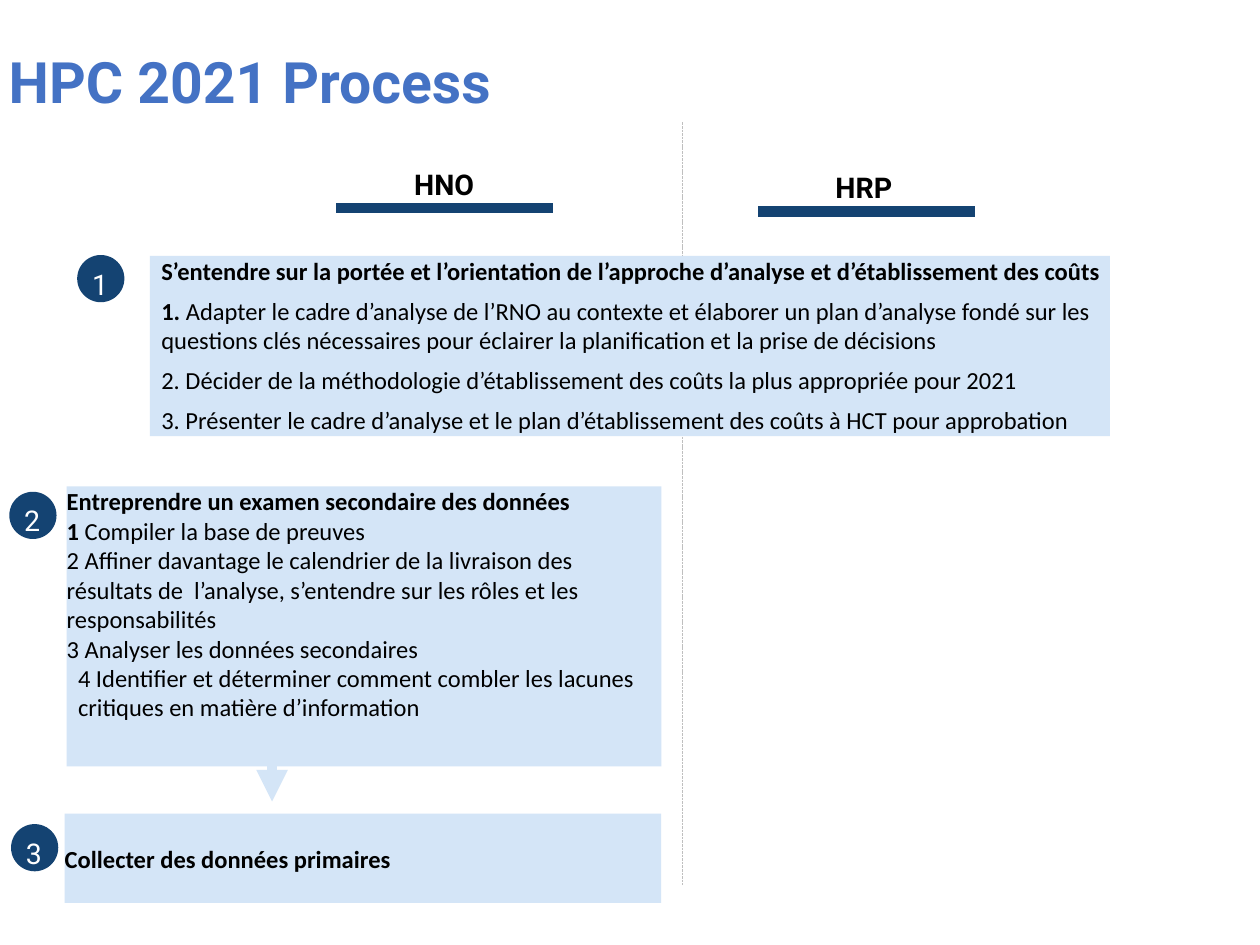
"""Build the HPC 2021 process slide."""
import pptx
import pptx.util
import pptx.dml.color
import pptx.enum.dml
import pptx.enum.shapes
import pptx.enum.text
import pptx.oxml

Pt = pptx.util.Pt
ALIGN = pptx.enum.text.PP_ALIGN
ANCHOR = pptx.enum.text.MSO_ANCHOR
SHAPE = pptx.enum.shapes.MSO_SHAPE

COLORS = {"title": "4472C4", "navy": "144372", "panel": "D4E5F7",
          "divider": "BFBFBF", "text": "000000", "white": "FFFFFF"}

TITLE = "HPC 2021 Process"
HEADINGS = [("HNO", 147.6, 85.7, 192.2, 118.8), ("HRP", 387.4, 87.1, 433.4, 121)]
HEADING_W, BAR_W = 212.4, 123.8
BADGE, DIGIT_DX, DIGIT_DY = 26, 8, -3.6
INDENT = 6.5

STEPS = [
    {"box": (85.7, 146.2, 548.6, 103), "badge": (44.6, 146.2), "anchor": ANCHOR.TOP,
     "lines": [
         ("S’entendre sur la portée et l’orientation de l’approche d’analyse "
          "et d’établissement des coûts", "", INDENT, 6),
         ("1. ", "Adapter le cadre d’analyse de l’RNO au contexte et élaborer un plan "
          "d’analyse fondé sur les questions clés nécessaires pour éclairer la "
          "planification et la prise de décisions", INDENT, 6),
         ("", "2. Décider de la méthodologie d’établissement des coûts la plus "
          "appropriée pour 2021", INDENT, 6),
         ("", "3. Présenter le cadre d’analyse et le plan d’établissement des coûts "
          "à HCT pour approbation", INDENT, 6)]},
    {"box": (38.1, 278, 339.8, 160), "badge": (5.8, 281.5), "anchor": ANCHOR.TOP,
     "lines": [
         ("Entreprendre un examen secondaire des données", "", 0, 0),
         ("1 ", "Compiler la base de preuves", 0, 0),
         ("", "2 Affiner davantage le calendrier de la livraison des résultats de  "
          "l’analyse, s’entendre sur les rôles et les responsabilités", 0, 0),
         ("", "3 Analyser les données secondaires", 0, 0),
         ("", "4 Identifier et déterminer comment combler les lacunes critiques "
          "en matière d’information", INDENT, 6)]},
    {"box": (37, 465, 340.8, 51), "badge": (6.8, 471.4), "anchor": ANCHOR.MIDDLE,
     "lines": [("Collecter des données primaires", "", 0, 0)]},
]


def rgb(name):
    return pptx.dml.color.RGBColor.from_string(COLORS[name])


def set_frame(tf, anchor=ANCHOR.TOP, wrap=True):
    tf.margin_left = tf.margin_right = tf.margin_top = tf.margin_bottom = 0
    tf.vertical_anchor, tf.word_wrap = anchor, wrap


def style(r, font, size, color, bold=False):
    r.font.name, r.font.size, r.font.bold = font, Pt(size), bold
    r.font.color.rgb = rgb(color)


def add_label(slide, text, box, size, color, bold=False, align=ALIGN.LEFT,
              spacing=1.0, wrap=True):
    tf = slide.shapes.add_textbox(*map(Pt, box)).text_frame
    set_frame(tf, wrap=wrap)
    p = tf.paragraphs[0]
    p.text, p.alignment, p.line_spacing = text, align, spacing
    style(p.runs[0], "Roboto", size, color, bold)


def add_line(slide, ends, color, width):
    kind = pptx.enum.shapes.MSO_CONNECTOR.STRAIGHT
    sp = slide.shapes.add_connector(kind, *map(Pt, ends))
    sp.line.color.rgb, sp.line.width = rgb(color), Pt(width)
    pr = sp._element.spPr
    pr.append(pr.makeelement(pptx.oxml.ns.qn("a:effectLst"), {}))
    return sp


def add_shape(slide, kind, box, color):
    sp = slide.shapes.add_shape(kind, *map(Pt, box))
    sp.shadow.inherit = False
    sp.fill.solid()
    sp.fill.fore_color.rgb = rgb(color)
    return sp


def add_step(slide, number, step):
    sp = add_shape(slide, SHAPE.RECTANGLE, step["box"], "panel")
    sp.line.fill.background()
    tf = sp.text_frame
    set_frame(tf, step["anchor"])
    for i, (strong, plain, indent, after) in enumerate(step["lines"]):
        p = tf.add_paragraph() if i else tf.paragraphs[0]
        p.alignment, p.space_after = ALIGN.LEFT, Pt(after)
        p._p.get_or_add_pPr().set("marL", str(Pt(indent)))
        for text, bold in ((strong, True), (plain, False)):
            if text:
                r = p.add_run()
                r.text = text
                style(r, "Calibri", 14, "text", bold)

    x, y = step["badge"]
    sp = add_shape(slide, SHAPE.OVAL, (x, y, BADGE, BADGE), "navy")
    sp.line.color.rgb, sp.line.width = rgb("navy"), Pt(1)
    add_label(slide, str(number), (x + DIGIT_DX, y + DIGIT_DY, 10, BADGE),
              16.3, "white", spacing=1.5, wrap=False)


def main():
    prs = pptx.Presentation()
    prs.slide_width, prs.slide_height = Pt(720), Pt(540)
    slide = prs.slides.add_slide(prs.slide_layouts[6])

    divider = add_line(slide, (390, 70, 390, 506), "divider", 0.5)
    divider.line.dash_style = pptx.enum.dml.MSO_LINE.SQUARE_DOT
    for text, x, y, bar_x, bar_y in HEADINGS:
        add_label(slide, text, (x, y, HEADING_W, 26), 16.3, "text", True, ALIGN.CENTER, 1.5)
        add_line(slide, (bar_x, bar_y, bar_x + BAR_W, bar_y), "navy", 6)

    for number, step in enumerate(STEPS, 1):
        add_step(slide, number, step)

    arrow = add_line(slide, (155.5, 431.3, 155.5, 458), "panel", 6)
    ln = arrow.line._get_or_add_ln()
    ln.append(ln.makeelement(pptx.oxml.ns.qn("a:tailEnd"), {"type": "triangle"}))
    add_label(slide, TITLE, (5, 26.6, 488, 34), 32.6, "title", True)

    prs.save("out.pptx")


if __name__ == "__main__":
    main()
